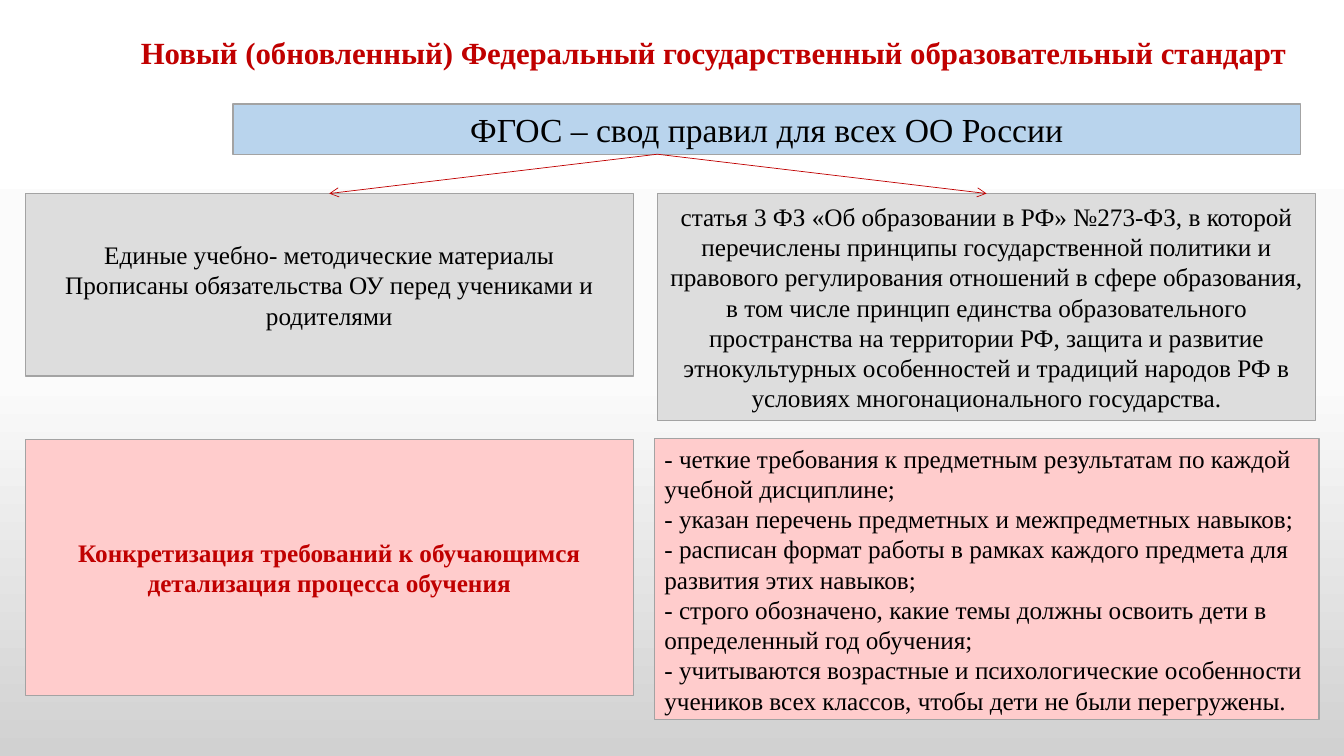
from copy import deepcopy

from pptx import Presentation
from pptx.dml.color import RGBColor
from pptx.enum.shapes import MSO_CONNECTOR, MSO_SHAPE
from pptx.enum.text import MSO_ANCHOR, MSO_AUTO_SIZE, PP_ALIGN
from pptx.oxml.ns import qn
from pptx.util import Inches, Pt
from lxml import etree

RECTANGLE = MSO_SHAPE.RECTANGLE
STRAIGHT = MSO_CONNECTOR.STRAIGHT
MIDDLE = MSO_ANCHOR.MIDDLE
GROW = MSO_AUTO_SIZE.SHAPE_TO_FIT_TEXT
CENTER, LEFT = PP_ALIGN.CENTER, PP_ALIGN.LEFT
TOP_SIDE = 0

THEME = {
    "font": "Times New Roman",
    "title": 22, "header": 24, "body": 18,
    "black": "000000", "red": "C00000", "border": "A3A3A3",
    "blue": "B9D4ED", "grey": "DDDDDD", "pink": "FFCCCC",
    "background": [(0, "FFFFFF"), (0.5, "FBFBFB"), (1, "D1D1D1")],
}

deck = Presentation()
deck.slide_width, deck.slide_height = Inches(13.33), Inches(7.5)
slide = deck.slides.add_slide(deck.slide_layouts[6])


def place(left, top, width, height):
    return [round(share * side / 100) for share, side in zip(
        (left, top, width, height), (deck.slide_width, deck.slide_height) * 2)]


def write(frame, paragraphs, size, color, bold=False, align=CENTER):
    frame.word_wrap = True
    for number, wording in enumerate(paragraphs):
        paragraph = frame.add_paragraph() if number else frame.paragraphs[0]
        paragraph.alignment = align
        run = paragraph.add_run()
        run.text = wording
        run.font.name = THEME["font"]
        run.font.size = Pt(THEME[size])
        run.font.bold = bold
        run.font.color.rgb = RGBColor.from_string(THEME[color])


backdrop = slide.background.fill
backdrop.gradient()
backdrop.gradient_angle = 270
stop_list = slide.element.find(".//" + qn("a:gsLst"))
stop_list.insert(1, deepcopy(stop_list[0]))
for stop, (position, color) in zip(backdrop.gradient_stops, THEME["background"]):
    stop.position = position
    stop.color.rgb = RGBColor.from_string(color)

title = slide.shapes.add_textbox(*place(8.25, 3.87, 89.65, 6.27)).text_frame
write(title, ["Новый (обновленный) Федеральный государственный образовательный стандарт"],
      "title", "red", bold=True)
title.auto_size = GROW

LEFT_COLUMN, LEFT_WIDTH = 1.88, 45.24
panels = [
    ((17.33, 13.73, 79.44, 6.67), "blue", "header", "black", False, CENTER,
     ["ФГОС – свод правил для всех ОО России"]),
    ((LEFT_COLUMN, 25.6, LEFT_WIDTH, 24.13), "grey", "body", "black", False, CENTER,
     ["Единые учебно- методические материалы",
      "Прописаны обязательства ОУ перед учениками и родителями"]),
    ((48.91, 25.6, 48.99, 30), "grey", "body", "black", False, CENTER,
     ["статья 3 ФЗ «Об образовании в РФ» №273-ФЗ, в которой перечислены принципы "
      "государственной политики и правового регулирования отношений в сфере образования, "
      "в том числе принцип единства образовательного пространства на территории РФ, "
      "защита и развитие этнокультурных особенностей и традиций народов РФ в условиях "
      "многонационального государства."]),
    ((LEFT_COLUMN, 58.13, LEFT_WIDTH, 33.87), "pink", "body", "red", True, CENTER,
     ["Конкретизация требований к обучающимся", "детализация процесса обучения"]),
    ((48.69, 58, 49.44, 37.2), "pink", "body", "black", False, LEFT,
     ["- четкие требования к предметным результатам по каждой учебной дисциплине;",
      "- указан перечень предметных и межпредметных навыков;",
      "- расписан формат работы в рамках каждого предмета для развития этих навыков;",
      "- строго обозначено, какие темы должны освоить дети в определенный год обучения;",
      "- учитываются возрастные и психологические особенности учеников всех классов, "
      "чтобы дети не были перегружены."]),
]

boxes = []
for area, fill, size, color, bold, align, paragraphs in panels:
    box = slide.shapes.add_shape(RECTANGLE, *place(*area))
    box.shadow.inherit = False
    box.fill.solid()
    box.fill.fore_color.rgb = RGBColor.from_string(THEME[fill])
    box.line.color.rgb = RGBColor.from_string(THEME["border"])
    box.line.width = Pt(1)
    box.text_frame.vertical_anchor = MIDDLE
    write(box.text_frame, paragraphs, size, color, bold, align)
    boxes.append(box)

header, materials, law = boxes[:3]
for target in (materials, law):
    arrow = slide.shapes.add_connector(
        STRAIGHT, law.left, header.top + header.height,
        target.left + target.width // 2, target.top)
    arrow.end_connect(target, TOP_SIDE)
    arrow.line.color.rgb = RGBColor.from_string(THEME["red"])
    arrow.line.width = Pt(0.5)
    outline = arrow.element.spPr.find(qn("a:ln"))
    etree.SubElement(outline, qn("a:tailEnd"), type="arrow")
    etree.SubElement(arrow.element.spPr, qn("a:effectLst"))

deck.save("out.pptx")
